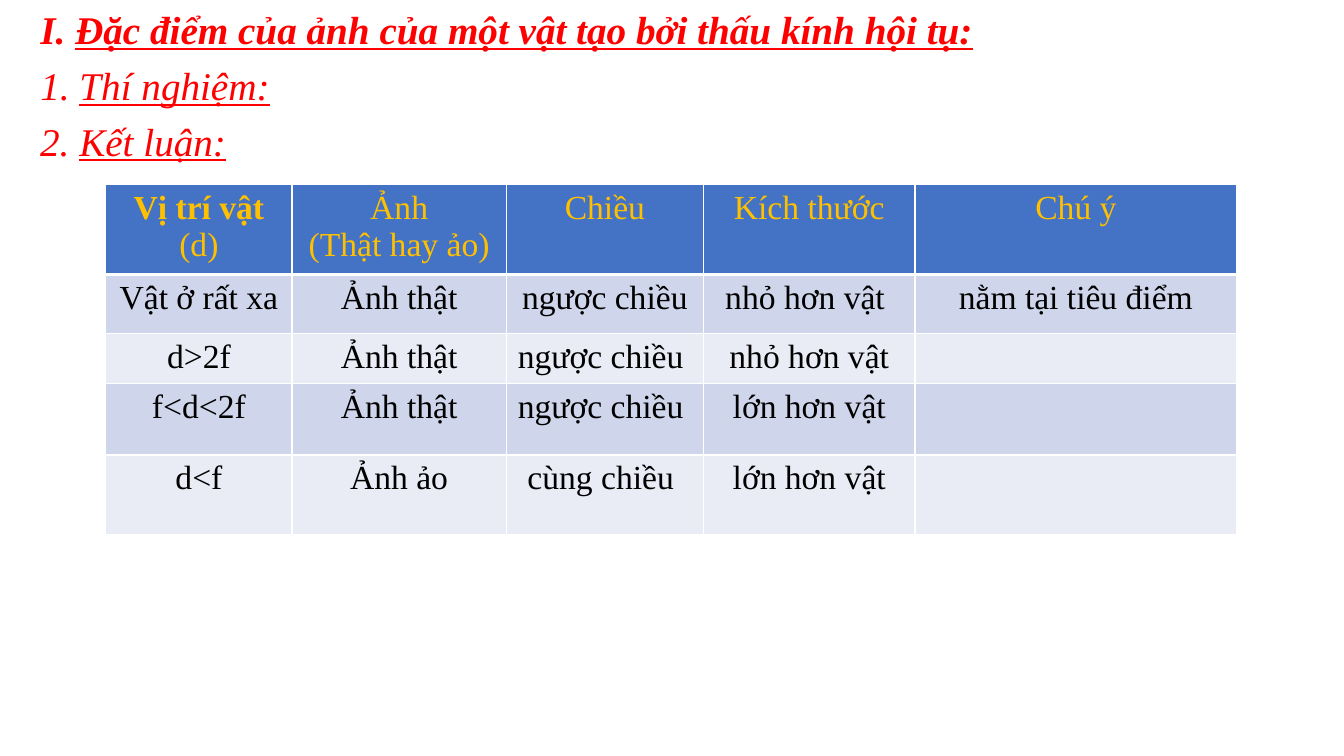
from lxml.etree import SubElement
from pptx import Presentation
from pptx.dml.color import RGBColor
from pptx.enum.text import MSO_ANCHOR as Anchor, MSO_AUTO_SIZE as AutoSize, PP_ALIGN as Align
from pptx.oxml.ns import qn
from pptx.util import Pt


def add_run(paragraph, text, size, color, bold=False, italic=False, underline=False):
    run = paragraph.add_run()
    run.text = text
    font = run.font
    font.name, font.size = "Times New Roman", Pt(size)
    font.bold, font.italic, font.underline = bold, italic, underline
    font.color.rgb = RGBColor.from_string(color)


def add_border(cell, side, width):
    line = SubElement(cell._tc.get_or_add_tcPr(), qn(f"a:{side}"), w=str(Pt(width)))
    fill = SubElement(line, qn("a:solidFill"))
    SubElement(fill, qn("a:srgbClr"), val="FFFFFF")


prs = Presentation()
prs.slide_width, prs.slide_height = Pt(960), Pt(540)
slide = prs.slides.add_slide(prs.slide_layouts[5])

# Headings
lesson = slide.shapes.title
lesson.left, lesson.top, lesson.width, lesson.height = Pt(21.6), Pt(0), Pt(862), Pt(110)
conclusion = slide.shapes.add_textbox(Pt(21.6), Pt(80), Pt(486), Pt(41))
for heading in (lesson, conclusion):
    frame = heading.text_frame
    frame.word_wrap = True
    frame.auto_size = AutoSize.NONE
    frame.vertical_anchor = Anchor.TOP

section = lesson.text_frame.paragraphs[0]
experiment = lesson.text_frame.add_paragraph()
experiment.space_before = Pt(6.5)
for paragraph, number, text, bold in (
    (section, "I. ", "Đặc điểm của ảnh của một vật tạo bởi thấu kính hội tụ:", True),
    (experiment, "1. ", "Thí nghiệm:", False),
    (conclusion.text_frame.paragraphs[0], "2. ", "Kết luận:", False),
):
    paragraph.alignment = Align.LEFT
    add_run(paragraph, number, 28, "FF0000", bold, italic=True)
    add_run(paragraph, text, 28, "FF0000", bold, italic=True, underline=True)

# Table of image properties; a line break starts a new paragraph
image_rows = [
    ["Vị trí vật ", "Ảnh\n(Thật hay ảo)", "Chiều", "Kích thước", "Chú ý"],
    ["Vật ở rất xa", "Ảnh thật", "ngược chiều", "nhỏ hơn vật ", "nằm tại tiêu điểm"],
    ["d>2f", "Ảnh thật", "ngược chiều ", "nhỏ hơn vật", ""],
    ["f<d<2f", "Ảnh thật", "ngược chiều ", "lớn hơn vật", ""],
    ["d<f", "Ảnh ảo", "cùng chiều ", "lớn hơn vật", ""],
]
col_widths = [133, 153, 141, 151, 230]
row_heights = [64, 42, 36, 51, 57]
row_fills = ["4472C4", "CFD5EA", "E9EBF5", "CFD5EA", "E9EBF5"]

properties = slide.shapes.add_table(
    len(row_heights), len(col_widths), Pt(75.6), Pt(132),
    Pt(sum(col_widths)), Pt(sum(row_heights))).table
for column, width in zip(properties.columns, col_widths):
    column.width = Pt(width)
for row, height in zip(properties.rows, row_heights):
    row.height = Pt(height)

for r, texts in enumerate(image_rows):
    is_header = r == 0
    for c, text in enumerate(texts):
        cell = properties.cell(r, c)
        for side in ("lnL", "lnR", "lnT", "lnB"):
            add_border(cell, side, 3 if is_header and side == "lnB" else 1)
        cell.fill.solid()
        cell.fill.fore_color.rgb = RGBColor.from_string(row_fills[r])
        for i, line in enumerate(text.split("\n") if text else []):
            frame = cell.text_frame
            paragraph = frame.add_paragraph() if i else frame.paragraphs[0]
            paragraph.alignment = Align.CENTER
            add_run(paragraph, line, 24, "FFC000" if is_header else "000000",
                    bold=is_header and c == 0)

# Symbol of the object distance, in regular weight
add_run(properties.cell(0, 0).text_frame.paragraphs[0], "(d)", 24, "FFC000")

prs.save("out.pptx")
